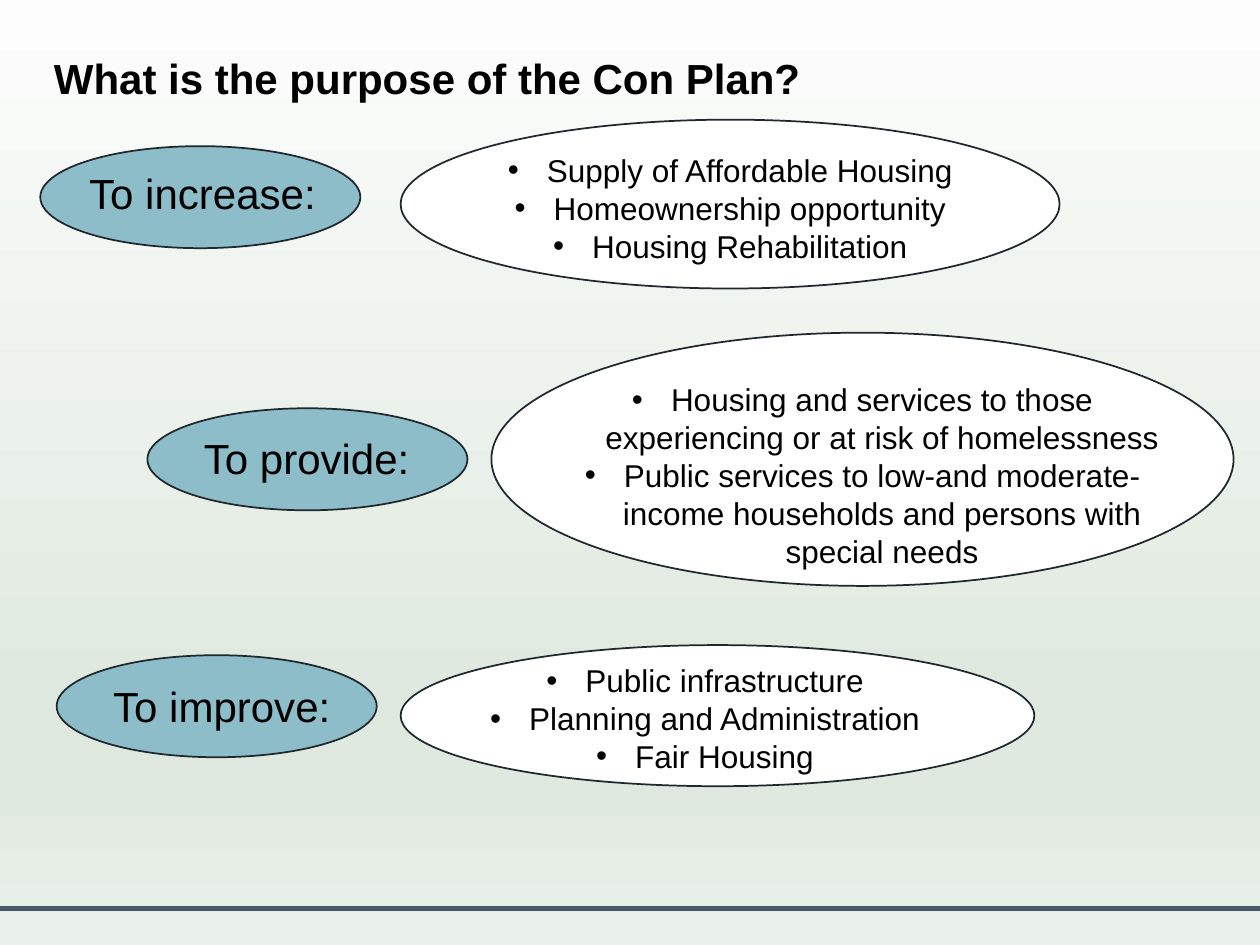
from lxml import etree
from pptx import Presentation
from pptx.dml.color import RGBColor
from pptx.enum.shapes import MSO_CONNECTOR, MSO_SHAPE
from pptx.enum.text import MSO_AUTO_SIZE, PP_ALIGN
from pptx.oxml.ns import qn
from pptx.util import Inches, Pt

OVAL = MSO_SHAPE.OVAL
STRAIGHT = MSO_CONNECTOR.STRAIGHT
LEFT, CENTER = PP_ALIGN.LEFT, PP_ALIGN.CENTER
FIT_SHAPE = MSO_AUTO_SIZE.SHAPE_TO_FIT_TEXT

COLUMNS, ROWS = 100, 75
CELL = Inches(0.1)
FONT = "Arial"
COLORS = {
    "text": "000000",
    "label": "8CBDC8",
    "detail": "FFFFFF",
    "outline": "20272E",
    "rule": "495869",
}
BACKGROUND_STOPS = [(0, "FCFDFC"), (74, "E0E9E0"), (83, "E0E9E0"), (100, "EAF1EB")]
LABEL_SIZE = (25.4, 8.1)
LABEL_TEXT_SIZE = (21.9, 5)

PURPOSES = [
    {
        "label": "To increase:",
        "label_at": (3.2, 11.6),
        "label_inset": (2.9, 1.2),
        "detail_box": (31.8, 9.5, 52.3, 13.4),
        "text_box": (7.2, 2, 37.9, 10.1),
        "details": [
            "Supply of Affordable Housing",
            "Homeownership opportunity",
            "Housing Rehabilitation",
        ],
    },
    {
        "label": "To provide:",
        "label_at": (11.7, 32.4),
        "label_inset": (3.5, 1.4),
        "detail_box": (39, 26.4, 58.9, 20.1),
        "text_box": (3.2, 3.3, 52.5, 19.2),
        "details": [
            "Housing and services to those experiencing or at risk of homelessness",
            "Public services to low-and moderate- income households and persons with special needs",
        ],
    },
    {
        "label": "To improve:",
        "label_at": (4.5, 52),
        "label_inset": (3.5, 1.5),
        "detail_box": (31.8, 51.2, 50.3, 11.2),
        "text_box": (5.2, 0.8, 37.9, 10.1),
        "details": [
            "Public infrastructure",
            "Planning and Administration",
            "Fair Housing",
        ],
    },
]


def cells(*values):
    """Convert grid units to slide lengths."""
    return [round(value * CELL) for value in values]


def rgb(name):
    """Look up a named colour."""
    return RGBColor.from_string(COLORS[name])


def add_bullet(paragraph):
    """Give a paragraph a hanging bullet."""
    properties = paragraph._p.get_or_add_pPr()
    indent = Inches(0.31)
    properties.set("marL", str(indent))
    properties.set("indent", str(-indent))
    etree.SubElement(properties, qn("a:buFont"), typeface=FONT)
    etree.SubElement(properties, qn("a:buChar"), char="•")


def add_text(slide, lines, box, size=18, bold=False, align=LEFT, bullets=False, wrap=True):
    """Place a text box with one paragraph per line."""
    frame = slide.shapes.add_textbox(*cells(*box)).text_frame
    frame.word_wrap = wrap
    frame.auto_size = FIT_SHAPE
    for index, line in enumerate(lines):
        paragraph = frame.add_paragraph() if index else frame.paragraphs[0]
        if bullets:
            add_bullet(paragraph)
        paragraph.alignment = align
        run = paragraph.add_run()
        run.text = line
        run.font.name = FONT
        run.font.size = Pt(size)
        run.font.bold = bold
        run.font.color.rgb = rgb("text")


def add_oval(slide, box, fill):
    """Place an outlined oval."""
    shape = slide.shapes.add_shape(OVAL, *cells(*box))
    shape.shadow.inherit = False
    shape.fill.solid()
    shape.fill.fore_color.rgb = rgb(fill)
    shape.line.color.rgb = rgb("outline")
    shape.line.width = Pt(1)


def paint_background(slide):
    """Fill the slide with a vertical gradient."""
    fill = slide.background.fill
    fill.gradient()
    fill.gradient_angle = 270
    stop_list = slide._element.find(".//" + qn("a:gsLst"))
    for stop in list(stop_list):
        stop_list.remove(stop)
    for position, color in BACKGROUND_STOPS:
        stop = etree.SubElement(stop_list, qn("a:gs"), pos=str(position * 1000))
        etree.SubElement(stop, qn("a:srgbClr"), val=color)


def add_footer_rule(slide, row):
    """Draw the rule across the foot of the slide."""
    rule = slide.shapes.add_connector(STRAIGHT, *cells(0, row, COLUMNS, row))
    rule.line.color.rgb = rgb("rule")
    rule.line.width = Pt(3)
    etree.SubElement(rule._element.spPr, qn("a:effectLst"))


def add_label(slide, text, box, inset):
    """Place a purpose label inside its oval."""
    add_oval(slide, box, "label")
    left, top = box[0] + inset[0], box[1] + inset[1]
    add_text(slide, [text], (left, top, *LABEL_TEXT_SIZE), size=24)


def add_details(slide, lines, box, text_box):
    """Place a bulleted list inside its oval."""
    add_oval(slide, box, "detail")
    left, top, width, height = text_box
    add_text(slide, lines, (box[0] + left, box[1] + top, width, height),
             align=CENTER, bullets=True)


def main():
    """Build and save the slide."""
    presentation = Presentation()
    presentation.slide_width, presentation.slide_height = cells(COLUMNS, ROWS)
    slide = presentation.slides.add_slide(presentation.slide_layouts[6])
    paint_background(slide)
    add_footer_rule(slide, 72.1)
    add_text(slide, ["What is the purpose of the Con Plan?"], (3.3, 3.7, 61.8, 5),
             size=24, bold=True, wrap=False)
    for purpose in PURPOSES:
        add_label(slide, purpose["label"], (*purpose["label_at"], *LABEL_SIZE),
                  purpose["label_inset"])
        add_details(slide, purpose["details"], purpose["detail_box"], purpose["text_box"])
    presentation.save("out.pptx")


if __name__ == "__main__":
    main()
